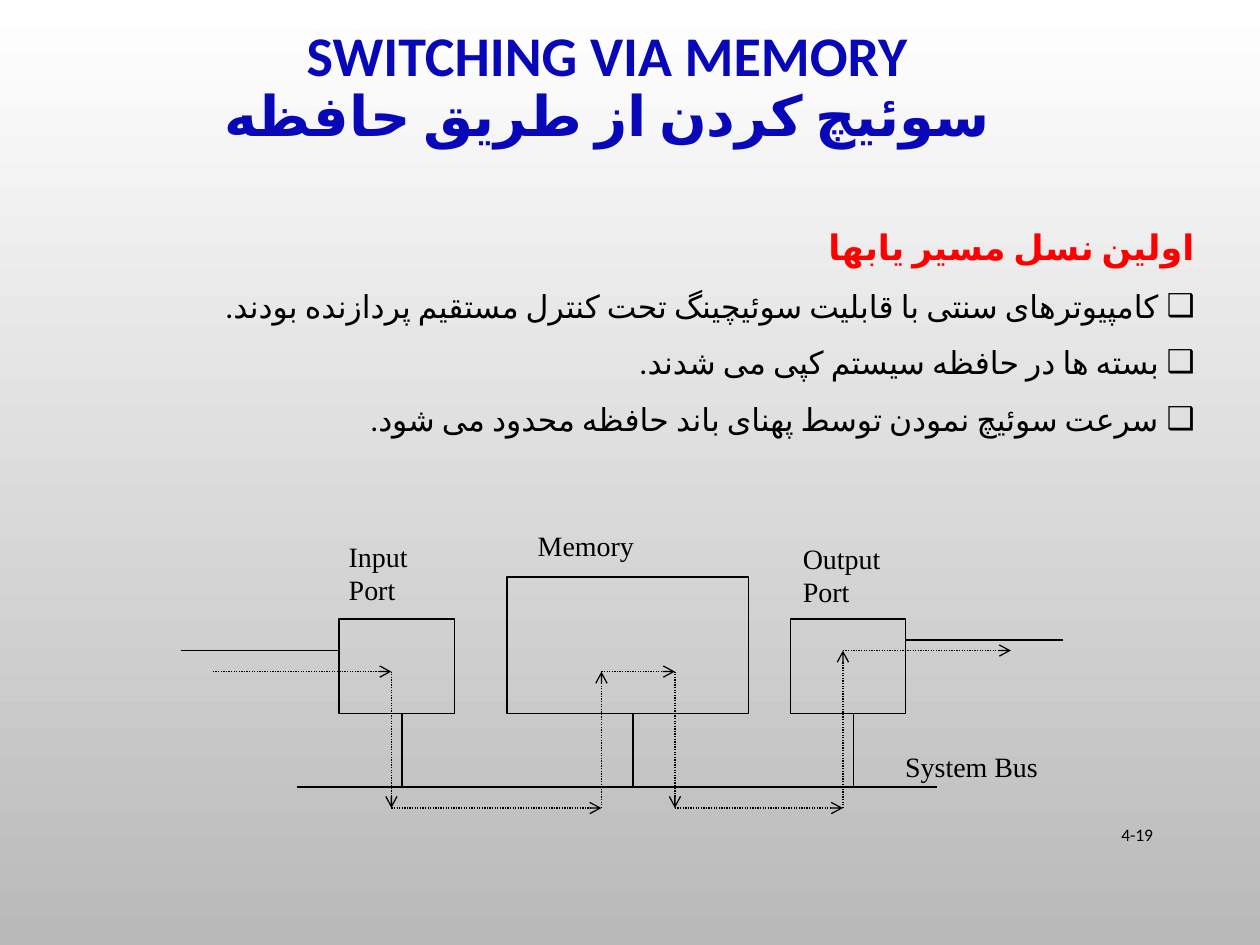
"""Build the slide about switching via memory."""
from itertools import pairwise

from lxml import etree
from pptx import Presentation
from pptx import util as u
from pptx.dml.color import RGBColor
from pptx.enum import dml, lang, shapes, text
from pptx.oxml.ns import qn

COLORS = {"title": "0808B8", "lead": "FF0000", "ink": "000000", "top": "FFFFFF", "bottom": "B9B9B9"}
TITLE = "SWITCHING VIA MEMORY\vسوئیچ کردن از طریق حافظه"
LEAD = "اولین نسل مسیر یابها"
POINTS = [
    " کامپیوترهای سنتی با قابلیت سوئیچینگ تحت کنترل مستقیم پردازنده بودند.",
    " بسته ها در حافظه سیستم کپی می شدند.",
    " سرعت سوئیچ نمودن توسط پهنای باند حافظه محدود می شود.",
]
BUS_ROW, BOX_BOTTOM = 20, 13
BOXES = [(15, 4, 11, 9), (58, 4, 11, 9), (31, 0, 23, 13)]
DROP_COLUMNS = [21, 43, 64]
WIRES = [((11, BUS_ROW), (72, BUS_ROW)), ((15, 7), (0, 7)), ((84, 6), (69, 6))]
ROUTE = [(3, 9), (20, 9), (20, 22), (40, 22), (40, 9), (47, 9), (47, 22), (63, 22), (63, 7), (79, 7)]
LABELS = [
    ("Input\nPort", 14.75, -4.2, 8, 7.75),
    ("Output\nPort", 58, -4, 10, 7.75),
    ("Memory", 32.75, -5.2, 11.75, 4.5),
    ("System Bus", 67.75, 15.8, 15, 4.5),
]


class Sketch:
    """Style and current slide; the diagram uses a grid of twelfths of an inch."""

    left, top, cell = 1.44, 4.58, 1 / 12
    font, label_font = "Calibri", "Times New Roman"

    def __init__(self, deck):
        """Add a title-only page with a vertical gradient."""
        self.width, self.height = deck.slide_width, deck.slide_height
        self.page = deck.slides.add_slide(deck.slide_layouts[5])
        fill = self.page.background.fill
        fill.gradient()
        fill.gradient_angle = 270
        for stop, position, name in zip(fill.gradient_stops, (0, 1), ("top", "bottom")):
            stop.position = position
            stop.color.rgb = self.color(name)

    def color(self, name):
        """Look up a palette colour."""
        return RGBColor.from_string(COLORS[name])

    def point(self, column, row):
        """Turn a grid position into slide lengths."""
        return u.Inches(self.left + column * self.cell), u.Inches(self.top + row * self.cell)

    def size(self, columns, rows):
        """Turn a grid extent into slide lengths."""
        return u.Inches(columns * self.cell), u.Inches(rows * self.cell)

    def share(self, x, y, width, height):
        """Turn shares of the slide into slide lengths."""
        return [int(part * whole) for part, whole in zip((x, y, width, height), (self.width, self.height) * 2)]

    def format(self, para, size, color="ink", bold=False, font=None):
        """Format every run of a paragraph, with a complex-script font for Persian."""
        for span in para.runs:
            span.font.name = font or self.font
            span.font.size = u.Pt(size)
            span.font.bold = bold
            span.font.color.rgb = self.color(color)
            if not span.text.isascii():
                span.font.language_id = lang.MSO_LANGUAGE_ID.FARSI
                etree.SubElement(span._r.get_or_add_rPr(), qn("a:cs"), typeface=self.font)

    def title(self, words, *area):
        """Place and format the title placeholder."""
        box = self.page.shapes.title
        box.left, box.top, box.width, box.height = self.share(*area)
        box.text_frame.text = words
        box.text_frame.vertical_anchor = text.MSO_ANCHOR.MIDDLE
        para = box.text_frame.paragraphs[0]
        para.alignment = text.PP_ALIGN.CENTER
        para.line_spacing = 0.9
        self.format(para, 32, "title", True)

    def number(self, words, *area):
        """Add the page number."""
        frame = self.page.shapes.add_textbox(*self.share(*area)).text_frame
        frame.word_wrap = True
        frame.vertical_anchor = text.MSO_ANCHOR.MIDDLE
        frame.text = words
        frame.paragraphs[0].alignment = text.PP_ALIGN.RIGHT
        self.format(frame.paragraphs[0], 10)

    def bullets(self, lead, points, *area):
        """Add a right-to-left heading with bulleted points."""
        frame = self.page.shapes.add_textbox(*self.share(*area)).text_frame
        frame.word_wrap = True
        frame.text = "\n".join([lead, *points])
        for index, para in enumerate(frame.paragraphs):
            para.alignment = text.PP_ALIGN.RIGHT
            para.line_spacing = 1.5
            properties = para._p.get_or_add_pPr()
            properties.set("rtl", "1")
            if index:
                etree.SubElement(properties, qn("a:buFont"), typeface=self.font)
                etree.SubElement(properties, qn("a:buChar"), char="❑")
                self.format(para, 18)
            else:
                self.format(para, 20, "lead", True)

    def box(self, column, row, columns, rows):
        """Add an outlined rectangle."""
        box = self.page.shapes.add_shape(
            shapes.MSO_SHAPE.RECTANGLE, *self.point(column, row), *self.size(columns, rows))
        box.shadow.inherit = False
        box.fill.background()
        box.line.color.rgb = self.color("ink")
        box.line.width = u.Pt(0.75)

    def wire(self, start, end, dotted=False):
        """Add a solid line or a dotted arrow."""
        wire = self.page.shapes.add_connector(
            shapes.MSO_CONNECTOR.STRAIGHT, *self.point(*start), *self.point(*end))
        wire.line.color.rgb = self.color("ink")
        wire.line.width = u.Pt(0.75)
        if dotted:
            wire.line.dash_style = dml.MSO_LINE.ROUND_DOT
            etree.SubElement(wire.line._get_or_add_ln(), qn("a:tailEnd"), type="arrow")
        etree.SubElement(wire._element.spPr, qn("a:effectLst"))

    def label(self, words, column, row, columns, rows):
        """Add a diagram label."""
        frame = self.page.shapes.add_textbox(*self.point(column, row), *self.size(columns, rows)).text_frame
        frame.word_wrap = False
        frame.text = words
        for para in frame.paragraphs:
            self.format(para, 16, font=self.label_font)


def main():
    """Build and save the deck."""
    deck = Presentation()
    deck.slide_width, deck.slide_height = u.Inches(10), u.Inches(7.5)
    sketch = Sketch(deck)
    sketch.title(TITLE, 0.057, 0.01, 0.85, 0.167)
    sketch.number("4-19", 0.862, 0.857, 0.063, 0.053)
    sketch.bullets(LEAD, POINTS, 0.025, 0.21, 0.933, 0.263)
    for area in BOXES:
        sketch.box(*area)
    drops = [((column, BOX_BOTTOM), (column, BUS_ROW)) for column in DROP_COLUMNS]
    for start, end in WIRES + drops:
        sketch.wire(start, end)
    for start, end in pairwise(ROUTE):
        sketch.wire(start, end, dotted=True)
    for label in LABELS:
        sketch.label(*label)
    deck.save("out.pptx")


if __name__ == "__main__":
    main()
